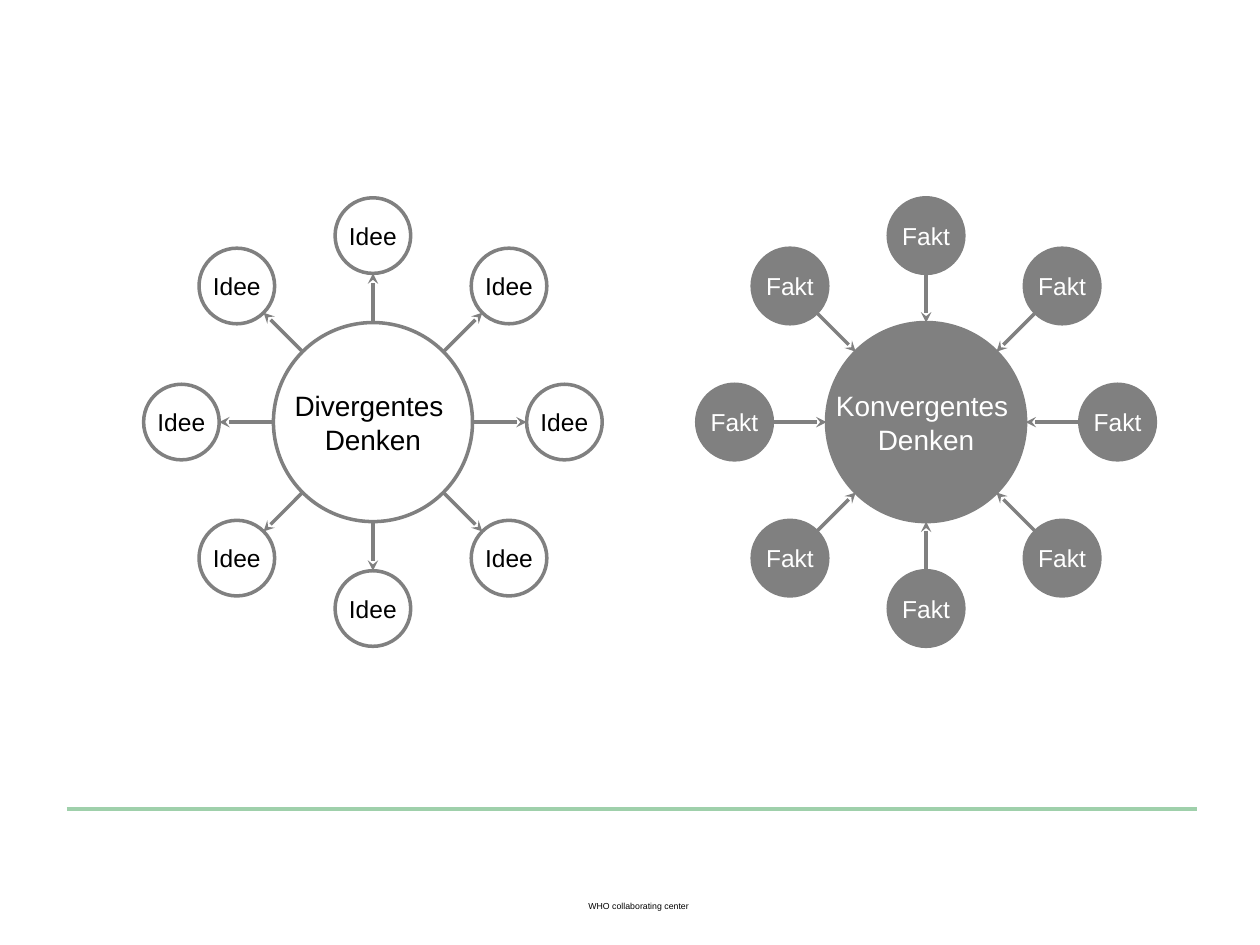
from math import hypot

from lxml import etree
from pptx import Presentation
from pptx.dml.color import RGBColor
from pptx.enum.shapes import MSO_CONNECTOR, MSO_SHAPE
from pptx.enum.text import MSO_ANCHOR, PP_ALIGN
from pptx.oxml.ns import qn
from pptx.util import Inches, Pt

OVAL = MSO_SHAPE.OVAL
STRAIGHT = MSO_CONNECTOR.STRAIGHT
CENTER = PP_ALIGN.CENTER
MIDDLE = MSO_ANCHOR.MIDDLE

BLACK = RGBColor(0x00, 0x00, 0x00)
WHITE = RGBColor(0xFF, 0xFF, 0xFF)
GRAY = RGBColor(0x80, 0x80, 0x80)
GREEN = RGBColor(0x9F, 0xD0, 0xAB)

FOOTER = "WHO collaborating center"
THINKING_MODELS = [
    {"hub": ["Divergentes ", "Denken"], "satellite": "Idee", "center_x": 2.96,
     "fill": WHITE, "text": BLACK, "outward": True},
    {"hub": ["Konvergentes ", "Denken"], "satellite": "Fakt", "center_x": 7.35,
     "fill": GRAY, "text": WHITE, "outward": False},
]

CENTER_Y = 3.35
HUB_RADIUS = 0.79
SATELLITE_RADIUS = 0.3
REACH_X, REACH_Y, REACH_DIAGONAL = 1.52, 1.48, 1.08
OFFSETS = [
    (0, -REACH_Y), (REACH_DIAGONAL, -REACH_DIAGONAL),
    (REACH_X, 0), (REACH_DIAGONAL, REACH_DIAGONAL),
    (0, REACH_Y), (-REACH_DIAGONAL, REACH_DIAGONAL),
    (-REACH_X, 0), (-REACH_DIAGONAL, -REACH_DIAGONAL),
]
CIRCLE_FRAME = {
    "word_wrap": False, "vertical_anchor": MIDDLE,
    "margin_left": Inches(0.05), "margin_right": Inches(0.05),
    "margin_top": Inches(0.05), "margin_bottom": Inches(0.05),
}


def apply_format(target, values):
    for name, value in values.items():
        setattr(target, name, value)


def write_lines(frame, lines, size, color):
    frame.text = "\n".join(lines)
    for paragraph in frame.paragraphs:
        paragraph.alignment = CENTER
        apply_format(paragraph.font, {"name": "Arial", "size": Pt(size)})
        paragraph.font.color.rgb = color


def add_circle(shapes, x, y, radius, lines, size, model):
    circle = shapes.add_shape(OVAL, Inches(x - radius), Inches(y - radius),
                              Inches(2 * radius), Inches(2 * radius))
    circle.shadow.inherit = False
    circle.fill.solid()
    circle.fill.fore_color.rgb = model["fill"]
    circle.line.color.rgb = GRAY
    circle.line.width = Pt(2)
    apply_format(circle.text_frame, CIRCLE_FRAME)
    write_lines(circle.text_frame, lines, size, model["text"])


def add_line(shapes, start, end, color, width, arrow=False):
    line = shapes.add_connector(STRAIGHT, *map(Inches, start + end))
    line.line.color.rgb = color
    line.line.width = Pt(width)
    properties = line._element.spPr
    if arrow:
        etree.SubElement(properties.find(qn("a:ln")), qn("a:tailEnd"), type="stealth")
    etree.SubElement(properties, qn("a:effectLst"))


def add_thinking_model(slide, model):
    shapes = slide.shapes.add_group_shape().shapes
    x = model["center_x"]
    add_circle(shapes, x, CENTER_Y, HUB_RADIUS, model["hub"], 16, model)
    for dx, dy in OFFSETS:
        add_circle(shapes, x + dx, CENTER_Y + dy, SATELLITE_RADIUS,
                   [model["satellite"]], 14, model)
    for dx, dy in OFFSETS:
        distance = hypot(dx, dy)
        hub_edge, satellite_edge = [
            (x + dx * reach / distance, CENTER_Y + dy * reach / distance)
            for reach in (HUB_RADIUS, distance - SATELLITE_RADIUS)
        ]
        ends = (hub_edge, satellite_edge) if model["outward"] else (satellite_edge, hub_edge)
        add_line(shapes, *ends, GRAY, 2, arrow=True)


def main():
    presentation = Presentation()
    presentation.slide_width = Inches(10)
    presentation.slide_height = Inches(7.5)
    slide = presentation.slides.add_slide(presentation.slide_layouts[6])

    add_line(slide.shapes, (0.53, 6.42), (9.5, 6.42), GREEN, 2.5)
    footer = slide.shapes.add_textbox(Inches(4.3), Inches(7.11), Inches(1.54), Inches(0.18))
    footer.text_frame.word_wrap = True
    write_lines(footer.text_frame, [FOOTER], 5, BLACK)
    footer.text_frame.paragraphs[0].line_spacing = 0.9

    for model in THINKING_MODELS:
        add_thinking_model(slide, model)

    presentation.save("out.pptx")


if __name__ == "__main__":
    main()
